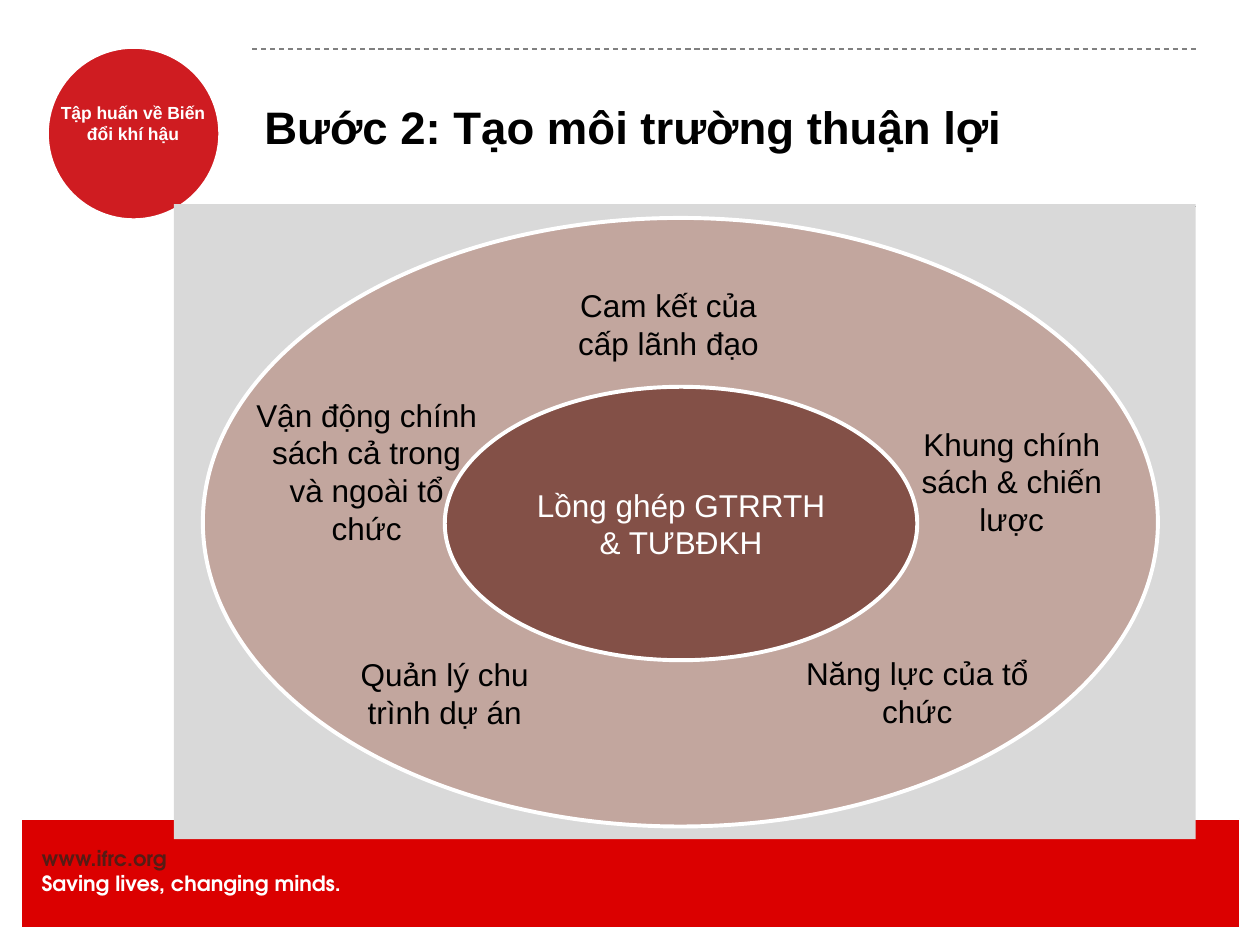
from dataclasses import dataclass

from lxml import etree
from pptx import Presentation
from pptx.dml.color import RGBColor
from pptx.enum.dml import MSO_LINE
from pptx.enum.shapes import MSO_CONNECTOR, MSO_SHAPE
from pptx.enum.text import MSO_ANCHOR, PP_ALIGN
from pptx.oxml.ns import qn
from pptx.shapes.autoshape import Shape
from pptx.slide import Slide
from pptx.util import Inches, Pt

COLORS = {
    "white": "FFFFFF", "black": "000000", "footer": "DB0000", "address": "551C15",
    "badge": "CF1C21", "rule": "808080", "panel": "D9D9D9",
    "environment": "C2A69E", "core": "835047",
}


@dataclass(frozen=True)
class Box:
    left: float
    top: float
    width: float
    height: float

    def emu(self) -> list[int]:
        return [Inches(v) for v in (self.left, self.top, self.width, self.height)]


@dataclass(frozen=True)
class TextStyle:
    size: float = 18
    colors: tuple[str, ...] = ("black",)  # one per paragraph
    font: str = "Arial"
    bold: bool = False
    align: PP_ALIGN = PP_ALIGN.CENTER
    anchor: MSO_ANCHOR = MSO_ANCHOR.TOP
    inset: bool = True


@dataclass(frozen=True)
class Factor:
    text: str
    box: Box


FACTORS = [
    Factor("Cam kết của cấp lãnh đạo", Box(4.43, 2.22, 1.75, 0.71)),
    Factor("Vận động chính sách cả trong và ngoài tổ chức", Box(1.91, 3.09, 2, 1.31)),
    Factor("Khung chính sách & chiến lược", Box(7.03, 3.32, 2, 1.01)),
    Factor("Năng lực của tổ chức", Box(6.28, 5.14, 2, 0.71)),
    Factor("Quản lý chu trình dự án", Box(2.53, 5.15, 2, 0.71)),
]


def rgb(name: str) -> RGBColor:
    return RGBColor.from_string(COLORS[name])


def write(shape: Shape, text: str, style: TextStyle) -> None:
    frame = shape.text_frame
    frame.word_wrap = True
    frame.vertical_anchor = style.anchor
    if not style.inset:
        frame.margin_left = frame.margin_right = 0
        frame.margin_top = frame.margin_bottom = 0
    frame.text = text
    for paragraph, color in zip(frame.paragraphs, style.colors):
        paragraph.alignment = style.align
        for run in paragraph.runs:
            run.font.name = style.font
            run.font.size = Pt(style.size)
            run.font.bold = style.bold
            run.font.color.rgb = rgb(color)


def add_text(slide: Slide, box: Box, text: str, style: TextStyle) -> None:
    write(slide.shapes.add_textbox(*box.emu()), text, style)


def add_filled(slide: Slide, kind: MSO_SHAPE, box: Box, fill: str,
               outline: float = 0) -> Shape:
    """Add a flat shape with a white outline of the given points, or none at 0."""
    shape = slide.shapes.add_shape(kind, *box.emu())
    shape.shadow.inherit = False
    shape.fill.solid()
    shape.fill.fore_color.rgb = rgb(fill)
    if outline:
        shape.line.color.rgb = rgb("white")
        shape.line.width = Pt(outline)
    else:
        shape.line.fill.background()
    return shape


def add_dashed_rule(slide: Slide, y: float) -> None:
    rule = slide.shapes.add_connector(
        MSO_CONNECTOR.STRAIGHT, Inches(2), Inches(y), Inches(9.5), Inches(y))
    rule.line.color.rgb = rgb("rule")
    rule.line.width = Pt(0.75)
    rule.line.dash_style = MSO_LINE.DASH
    etree.SubElement(rule.element.spPr, qn("a:effectLst"))


def add_frame(slide: Slide) -> None:
    """Add the footer band, the course badge, the rules and the title."""
    add_filled(slide, MSO_SHAPE.RECTANGLE, Box(0.17, 6.5, 9.67, 0.86), "footer", 0.75)
    add_text(slide, Box(0.33, 6.71, 3.42, 0.4),
             "www.ifrc.org\nSaving lives, changing minds.",
             TextStyle(12, ("address", "white"), "TeX Gyre Adventor", True,
                       PP_ALIGN.LEFT, inset=False))
    add_filled(slide, MSO_SHAPE.OVAL, Box(0.37, 0.37, 1.38, 1.38), "badge", 2.5)
    add_text(slide, Box(0.43, 0.81, 1.25, 0.5), "Tập huấn về Biến đổi khí hậu",
             TextStyle(10, ("white",), bold=True, inset=False))
    for y in (0.39, 1.64):
        add_dashed_rule(slide, y)
    add_text(slide, Box(2, 0.38, 7.8, 1.25), "Bước 2: Tạo môi trường thuận lợi",
             TextStyle(26, bold=True, align=PP_ALIGN.LEFT, anchor=MSO_ANCHOR.MIDDLE))


def add_diagram(slide: Slide) -> None:
    add_filled(slide, MSO_SHAPE.RECTANGLE, Box(1.38, 1.62, 8.11, 5.04), "panel")
    add_filled(slide, MSO_SHAPE.OVAL, Box(1.61, 1.73, 7.58, 4.83), "environment", 2.25)
    core = add_filled(slide, MSO_SHAPE.OVAL, Box(3.53, 3.07, 3.75, 2.17), "core", 2.25)
    write(core, "Lồng ghép GTRRTH & TƯBĐKH",
          TextStyle(colors=("white",), anchor=MSO_ANCHOR.MIDDLE))
    for factor in FACTORS:
        add_text(slide, factor.box, factor.text, TextStyle())


def main() -> None:
    presentation = Presentation()
    presentation.slide_width = Inches(10)
    presentation.slide_height = Inches(7.5)
    slide = presentation.slides.add_slide(presentation.slide_layouts[6])
    add_frame(slide)
    add_diagram(slide)
    presentation.save("out.pptx")


if __name__ == "__main__":
    main()
